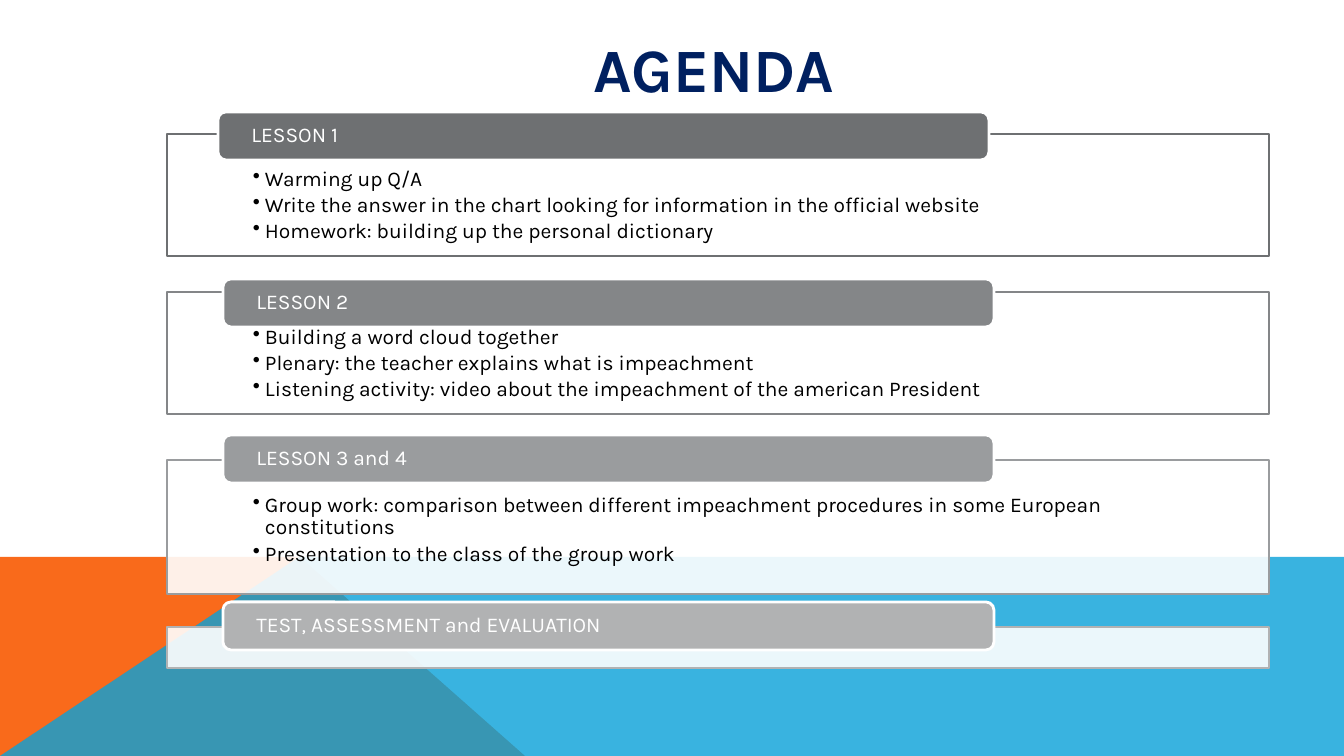
from lxml import etree
from pptx import Presentation
from pptx.dml.color import RGBColor
from pptx.enum.shapes import MSO_SHAPE
from pptx.enum.text import MSO_ANCHOR, PP_ALIGN
from pptx.oxml.ns import qn
from pptx.util import Pt

RECT, PILL = MSO_SHAPE.RECTANGLE, MSO_SHAPE.ROUNDED_RECTANGLE
TOP, MIDDLE = MSO_ANCHOR.TOP, MSO_ANCHOR.MIDDLE
LEFT, CENTER = PP_ALIGN.LEFT, PP_ALIGN.CENTER

PX = 914400 / 100.8
WIDE, HIGH = 1344, 756
FONT = "Karla"
TITLE = "AGENDA"
BANDS = [
    ("F96A1B", 100, [(0, 756), (0, 557), (300, 557), (525, 756)]),
    ("08A1D9", 80, [(0, 756), (299, 557), (1344, 557), (1344, 756)]),
]
BOX_X, BOX_W = 167, 1102
TAB_W, TAB_H = 771, 48
LESSONS = [
    ("LESSON 1", "6E7072", 134, 122, 218, 112, [
        "Warming up Q/A",
        "Write the answer in the chart looking for information in the official website",
        "Homework: building up the personal dictionary"]),
    ("LESSON 2", "848688", 292, 122, 223, 279, [
        "Building a word cloud together",
        "Plenary: the teacher explains what is impeachment",
        "Listening activity: video about the impeachment of the american President"]),
    ("LESSON 3 and 4", "9A9C9E", 460, 134, 223, 435, [
        "Group work: comparison between different impeachment procedures in some European constitutions",
        "Presentation to the class of the group work"]),
    ("TEST, ASSESSMENT and EVALUATION", "B1B2B3", 627, 41, 223, 602, []),
]


def emu(px):
    return round(px * PX)


def color(code):
    return RGBColor.from_string(code)


def paint(shape, code, alpha=100, line=None):
    shape.shadow.inherit = False
    shape.fill.solid()
    shape.fill.fore_color.rgb = color(code)
    if alpha < 100:
        tone = shape.fill._xPr.find(qn("a:solidFill"))[0]
        etree.SubElement(tone, qn("a:alpha"), val=str(alpha * 1000))
    if line:
        shape.line.color.rgb = color(line)
        shape.line.width = Pt(2)
    else:
        shape.line.fill.background()


def style(para, size, code, align=LEFT, bold=False):
    para.alignment = align
    font = para.font
    font.name, font.size, font.bold = FONT, Pt(size), bold
    font.color.rgb = color(code)


def bullet(para):
    props = para._p.get_or_add_pPr()
    props.set("marL", str(emu(12)))
    props.set("indent", str(emu(-12)))
    mark = etree.Element(qn("a:buChar"), char="•")
    props.find(qn("a:defRPr")).addprevious(mark)


def block(slide, kind, place, lines, insets, anchor, code):
    shape = slide.shapes.add_shape(kind, *map(emu, place))
    frame = shape.text_frame
    frame.word_wrap = True
    frame.vertical_anchor = anchor
    (frame.margin_left, frame.margin_top,
     frame.margin_right, frame.margin_bottom) = map(emu, insets)
    for i, line in enumerate(lines):
        para = frame.add_paragraph() if i else frame.paragraphs[0]
        para.text = line
        para.line_spacing = 0.9
        style(para, 15, code)
    return shape


def main():
    deck = Presentation()
    deck.slide_width, deck.slide_height = emu(WIDE), emu(HIGH)
    slide = deck.slides.add_slide(deck.slide_layouts[5])

    for code, alpha, points in BANDS:
        path = slide.shapes.build_freeform(*points[0], scale=PX)
        path.add_line_segments(points[1:], close=True)
        paint(path.convert_to_shape(), code, alpha)

    title = slide.shapes.title
    title.left, title.top, title.width, title.height = map(emu, (166, 10, 1096, 115))
    title.text_frame.text = TITLE
    title.text_frame.vertical_anchor = MIDDLE
    style(title.text_frame.paragraphs[0], 44, "002060", CENTER, True)

    for name, code, top, high, tab_x, tab_y, items in LESSONS:
        box = block(slide, RECT, (BOX_X, top, BOX_W, high), items,
                    (86, 34, 86, 12), TOP, "000000")
        paint(box, "FFFFFF", 90, code)
        if items:
            for para in box.text_frame.paragraphs:
                para.space_after = Pt(2.6)
                bullet(para)
        tab = block(slide, PILL, (tab_x, tab_y, TAB_W, TAB_H), [name],
                    (31, 0, 31, 0), MIDDLE, "FFFFFF")
        paint(tab, code, line="FFFFFF")

    deck.save("out.pptx")


if __name__ == "__main__":
    main()
